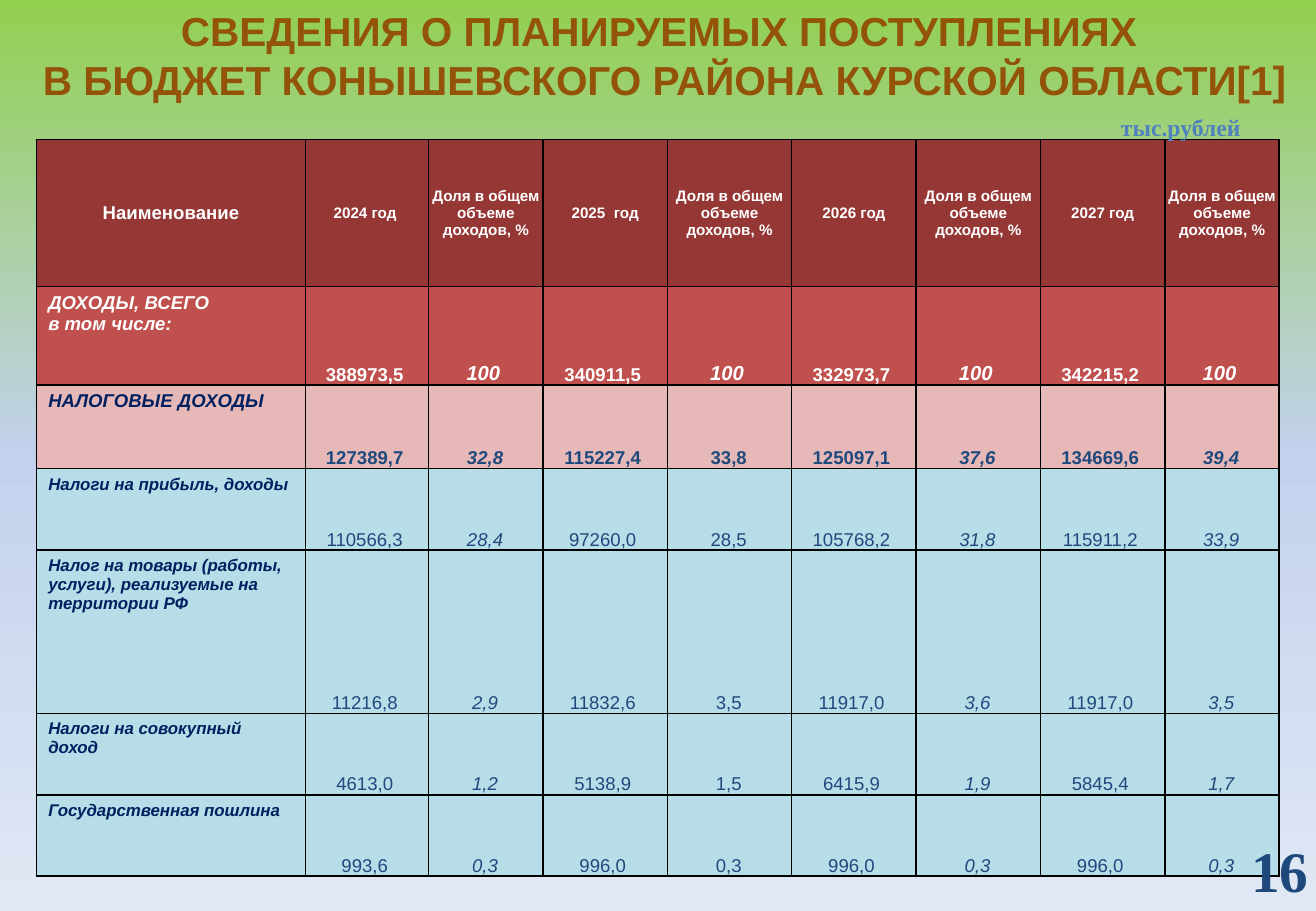
import copy

import lxml.etree
import pptx
import pptx.dml.color
import pptx.enum.text
import pptx.oxml.ns
import pptx.util

Cm = pptx.util.Cm
ALIGN = pptx.enum.text.PP_ALIGN
ANCHOR = pptx.enum.text.MSO_ANCHOR
qn = pptx.oxml.ns.qn

SKY_STOPS = [(0, "92D050"), (0.5, "C2D1ED"), (1, "E1E8F5")]
SHARE = "Доля в общем объеме доходов, %"
HEADINGS = ["Наименование", "2024 год ", SHARE, "2025  год", SHARE,
            "2026 год", SHARE, "2027 год", SHARE]
COLUMN_WIDTHS = [5.63, 2.57, 2.39, 2.6, 2.6, 2.6, 2.6, 2.6, 2.39]
HEADING_HEIGHT = 3.07
PLAIN_SHARE_COLUMN = 4

TOTAL = dict(fill="C0504D", name_color="FFFFFF", color="FFFFFF",
             name_size=11, share_size=12, bold=True, share_inset=0.1)
GROUP = dict(fill="E6B9B8", name_color="002060", color="1F497D",
             name_size=11, share_size=11, bold=True, share_inset=0.03)
DETAIL = dict(GROUP, fill="B7DEE8", name_size=10, bold=False)

INCOMES = [
    (TOTAL, 2.06, "ДОХОДЫ, ВСЕГО\nв том числе:",
     ["388973,5", "100", "340911,5", "100", "332973,7", "100", "342215,2", "100"]),
    (GROUP, 1.75, "НАЛОГОВЫЕ ДОХОДЫ",
     ["127389,7", "32,8", "115227,4", "33,8", "125097,1", "37,6", "134669,6", "39,4"]),
    (DETAIL, 1.7, "Налоги на прибыль, доходы",
     ["110566,3", "28,4", "97260,0", "28,5", "105768,2", "31,8", "115911,2", "33,9"]),
    (DETAIL, 3.42, "Налог на товары (работы, услуги), реализуемые на территории РФ",
     ["11216,8", "2,9", "11832,6", "3,5", "11917,0", "3,6", "11917,0", "3,5"]),
    (DETAIL, 1.7, "Налоги на совокупный доход",
     ["4613,0", "1,2", "5138,9", "1,5", "6415,9", "1,9", "5845,4", "1,7"]),
    (DETAIL, 1.7, "Государственная пошлина",
     ["993,6", "0,3", "996,0", "0,3", "996,0", "0,3", "996,0", "0,3"]),
]


def rgb(value):
    """Turn a hex string into a colour."""
    return pptx.dml.color.RGBColor.from_string(value)


def write(frame, text, size=11, color="FFFFFF", bold=True, italic=False,
          font="Arial", align=ALIGN.CENTER):
    """Fill a text frame with text in one format."""
    frame.text = text
    for paragraph in frame.paragraphs:
        paragraph.alignment = align
        for run in paragraph.runs:
            run.font.size = pptx.util.Pt(size)
            run.font.color.rgb = rgb(color)
            run.font.bold = bold
            run.font.italic = italic
            run.font.name = font


def text_box(slide, box, text, wrap=True, **style):
    """Place a text box at left, top, width, height in centimetres."""
    frame = slide.shapes.add_textbox(*map(Cm, box)).text_frame
    frame.word_wrap = wrap
    write(frame, text, **style)


def paint_background(slide):
    """Paint the vertical gradient behind the slide."""
    sky = slide.background.fill
    sky.gradient()
    sky.gradient_angle = 270
    stop_list = slide.element.find(".//" + qn("a:gsLst"))
    stop_list.append(copy.deepcopy(stop_list[-1]))
    for stop, (position, color) in zip(sky.gradient_stops, SKY_STOPS):
        stop.position = position
        stop.color.rgb = rgb(color)


def outline(cell):
    """Draw a thin black line on every side of a cell."""
    properties = cell._tc.get_or_add_tcPr()
    for index, side in enumerate(("a:lnL", "a:lnR", "a:lnT", "a:lnB")):
        line = lxml.etree.Element(qn(side), w=str(pptx.util.Pt(1)))
        paint = lxml.etree.SubElement(line, qn("a:solidFill"))
        lxml.etree.SubElement(paint, qn("a:srgbClr"), val="000000")
        properties.insert(index, line)


def fill_cell(cell, text, fill, anchor, insets, **style):
    """Set the fill, insets, border and text of a cell."""
    cell.fill.solid()
    cell.fill.fore_color.rgb = rgb(fill)
    cell.vertical_anchor = anchor
    (cell.margin_left, cell.margin_top,
     cell.margin_right, cell.margin_bottom) = map(Cm, insets)
    write(cell.text_frame, text, **style)
    outline(cell)


def income_row(cells, look, name, amounts):
    """Write one income line: its name, then amounts and shares by year."""
    fill_cell(cells[0], name, look["fill"], ANCHOR.TOP, (0.25, 0.13, 0.25, 0.13),
              size=look["name_size"], color=look["name_color"],
              italic=True, align=ALIGN.LEFT)
    for column, amount in enumerate(amounts, 1):
        is_share = column % 2 == 0
        plain = column == PLAIN_SHARE_COLUMN and look is not TOTAL
        fill_cell(cells[column], amount, look["fill"], ANCHOR.BOTTOM,
                  (0, 0, look["share_inset"] if is_share else 0.1, 0),
                  size=look["share_size"] if is_share else 11,
                  color=look["color"], bold=look["bold"],
                  italic=is_share and not plain)


def income_table(slide, left, top):
    """Build the table of planned incomes from its top left corner."""
    heights = [HEADING_HEIGHT] + [height for _, height, _, _ in INCOMES]
    table = slide.shapes.add_table(
        len(heights), len(HEADINGS), Cm(left), Cm(top),
        Cm(sum(COLUMN_WIDTHS)), Cm(sum(heights))).table
    table.horz_banding = False
    for column, width in zip(table.columns, COLUMN_WIDTHS):
        column.width = Cm(width)
    for row, height in zip(table.rows, heights):
        row.height = Cm(height)
    for column, heading in enumerate(HEADINGS):
        fill_cell(table.cell(0, column), heading, "953735", ANCHOR.MIDDLE,
                  (0, 0, 0, 0), size=9 if column else 11)
    for row, (look, _, name, amounts) in enumerate(INCOMES, 1):
        income_row(table.rows[row].cells, look, name, amounts)


def header(slide, left, top, width):
    """Place the unit and the two-line title in the top band."""
    text_box(slide, (left + 22.35, top + 2.24, 3.45, 0.86), "тыс.рублей",
             size=14, color="4F81BD", font="Times New Roman")
    text_box(slide, (left, top, width, 2.31),
             "СВЕДЕНИЯ О ПЛАНИРУЕМЫХ ПОСТУПЛЕНИЯХ \v"
             "В БЮДЖЕТ КОНЫШЕВСКОГО РАЙОНА КУРСКОЙ ОБЛАСТИ[1]",
             size=24, color="93540A")


def page_number(slide, left, top):
    """Place the page number in the bottom right corner."""
    text_box(slide, (left, top, 1.73, 1.7), "16", wrap=False, size=34,
             color="1F497D", font="Times New Roman", align=ALIGN.LEFT)


def main():
    """Build the slide and save it."""
    deck = pptx.Presentation()
    deck.slide_width, deck.slide_height = Cm(27.51), Cm(19.05)
    slide = deck.slides.add_slide(deck.slide_layouts[6])
    paint_background(slide)
    income_table(slide, 0.76, 2.92)
    header(slide, 0.61, 0, 26.57)
    page_number(slide, 25.91, 17.35)
    deck.save("out.pptx")


if __name__ == "__main__":
    main()
